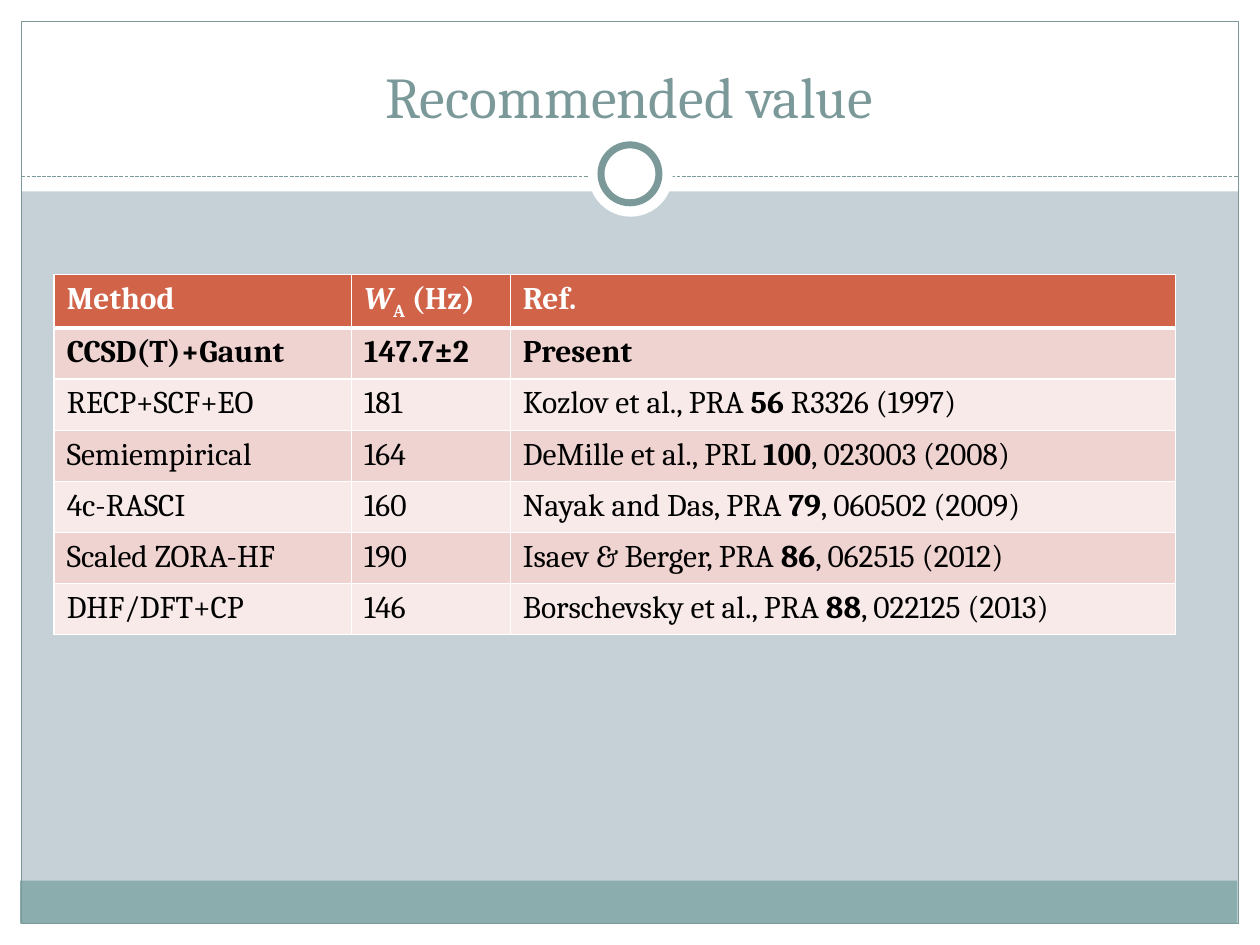
from pptx import Presentation
from pptx.dml.color import RGBColor
from pptx.enum.dml import MSO_LINE
from pptx.enum.shapes import MSO_CONNECTOR, MSO_SHAPE
from pptx.enum.text import MSO_ANCHOR, PP_ALIGN
from pptx.oxml.ns import qn
from pptx.util import Inches, Pt
from lxml.etree import SubElement

# Content: a cell is a list of (text, style) runs
TITLE = "Recommended value"
HEAD = [
    [("Method", "b")],
    [("W", "bi"), ("A", "bs"), (" (Hz)", "b")],
    [("Ref.", "b")],
]
BEST = [[(text, "b")] for text in ("CCSD(T)+Gaunt", "147.7±2", "Present")]
PAST = [
    ("RECP+SCF+EO", "181", "Kozlov et al., PRA ", "56", " R3326 (1997)"),
    ("Semiempirical", "164", "DeMille et al., PRL ", "100", ", 023003 (2008)"),
    ("4c-RASCI", "160", "Nayak and Das, PRA ", "79", ", 060502 (2009)"),
    ("Scaled ZORA-HF", "190", "Isaev & Berger, PRA ", "86", ", 062515 (2012)"),
    ("DHF/DFT+CP", "146", "Borschevsky et al., PRA ", "88", ", 022125 (2013)"),
]
ROWS = [HEAD, BEST] + [
    [[(name, "")], [(value, "")], [(who, ""), (vol, "b"), (page, "")]]
    for name, value, who, vol, page in PAST
]
COLS = [2.36, 1.26, 5.28]

FONT = "Cambria"
WHITE = RGBColor(0xFF, 0xFF, 0xFF)
BLACK = RGBColor(0, 0, 0)
BACK = RGBColor(0xC5, 0xD1, 0xD7)
TEAL = RGBColor(0x7C, 0x99, 0x9A)
BAND = RGBColor(0x8C, 0xAD, 0xAE)
RED = RGBColor(0xD1, 0x63, 0x49)
PINK = RGBColor(0xEE, 0xD3, 0xD0)
PALE = RGBColor(0xF7, 0xEA, 0xE9)

RECT, OVAL = MSO_SHAPE.RECTANGLE, MSO_SHAPE.OVAL
# Kind, box, fill, line width
FRAME = [
    (RECT, (0, 7.33, 10, 0.17), WHITE, 0),
    (RECT, (0, 0, 10, 1.52), WHITE, 0),
    (RECT, (0, 0, 0.17, 7.5), WHITE, 0),
    (RECT, (9.83, 0, 0.17, 7.5), WHITE, 0),
    (RECT, (0.16, 6.99, 9.66, 0.34), BAND, 0),
    (RECT, (0.17, 0.17, 9.66, 7.16), None, 0.75),
]
RING = [
    (OVAL, (4.67, 1.05, 0.67, 0.67), WHITE, 0),
    (OVAL, (4.77, 1.15, 0.46, 0.46), WHITE, 4),
]


def draw(shapes, kind, box, fill, width):
    shape = shapes.add_shape(kind, *map(Inches, box))
    shape.shadow.inherit = False
    if fill is None:
        shape.fill.background()
    else:
        shape.fill.solid()
        shape.fill.fore_color.rgb = fill
    if width:
        shape.line.color.rgb = TEAL
        shape.line.width = Pt(width)
    else:
        shape.line.fill.background()


def edge(cell, side, width):
    line = SubElement(cell._tc.get_or_add_tcPr(), qn("a:ln" + side),
                      w=str(Pt(width)))
    paint = SubElement(line, qn("a:solidFill"))
    SubElement(paint, qn("a:srgbClr"), val=str(WHITE))


def write(cell, runs, color):
    para = cell.text_frame.paragraphs[0]
    para.font.name, para.font.size = FONT, Pt(18)
    para.font.color.rgb = color
    for text, style in runs:
        run = para.add_run()
        run.text = text
        run.font.bold = "b" in style
        run.font.italic = "i" in style
        if "s" in style:
            run.font._element.set("baseline", "-25000")


prs = Presentation()
prs.slide_width, prs.slide_height = Inches(10), Inches(7.5)
slide = prs.slides.add_slide(prs.slide_layouts[5])
shapes = slide.shapes
slide.background.fill.solid()
slide.background.fill.fore_color.rgb = BACK

# Frame, dashed rule and ring
for part in FRAME:
    draw(shapes, *part)
rule = shapes.add_connector(MSO_CONNECTOR.STRAIGHT, Inches(0.17), Inches(1.4),
                            Inches(9.83), Inches(1.4))
rule.line.color.rgb = TEAL
rule.line.width = Pt(0.75)
rule.line.dash_style = MSO_LINE.SQUARE_DOT
SubElement(rule._element.spPr, qn("a:effectLst"))
for part in RING:
    draw(shapes, *part)

# Title, raised above the frame
title = shapes.title
title.left, title.top = Inches(0.33), Inches(0.25)
title.width, title.height = Inches(9.33), Inches(0.83)
title.text_frame.text = TITLE
title.text_frame.vertical_anchor = MSO_ANCHOR.BOTTOM
para = title.text_frame.paragraphs[0]
para.alignment = PP_ALIGN.CENTER
para.font.name, para.font.size = FONT, Pt(33)
para.font.color.rgb = TEAL
shapes._spTree.append(title._element)

# Table
table = shapes.add_table(len(ROWS), len(COLS), Inches(0.43), Inches(2.18),
                         Inches(sum(COLS)), Inches(2.84)).table
for col, width in zip(table.columns, COLS):
    col.width = Inches(width)
for r, row in enumerate(ROWS):
    fill = RED if r == 0 else PINK if r % 2 else PALE
    for c, runs in enumerate(row):
        cell = table.cell(r, c)
        for side in "LRTB":
            thick = (r, side) in ((0, "B"), (1, "T"))
            edge(cell, side, 3 if thick else 1)
        cell.fill.solid()
        cell.fill.fore_color.rgb = fill
        write(cell, runs, BLACK if r else WHITE)

prs.save("out.pptx")
